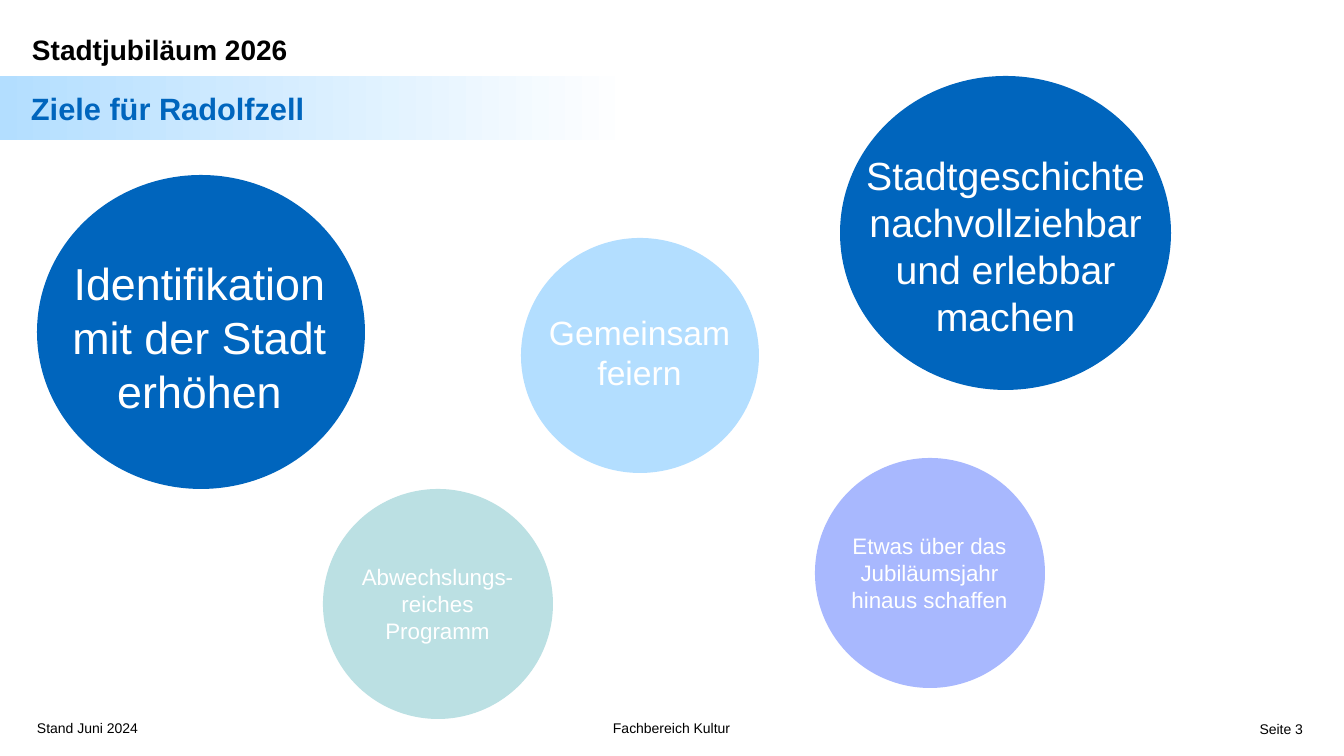
from pptx import Presentation
from pptx.dml.color import RGBColor
from pptx.enum.shapes import MSO_SHAPE
from pptx.enum.text import PP_ALIGN
from pptx.util import Emu, Pt

CIRCLE, BAND = MSO_SHAPE.FLOWCHART_CONNECTOR, MSO_SHAPE.RECTANGLE
LEFT, CENTER, RIGHT = PP_ALIGN.LEFT, PP_ALIGN.CENTER, PP_ALIGN.RIGHT
FONT = "Arial"
BLACK, WHITE, BLUE, SKY = "000000", "FFFFFF", "0065BD", "B3DEFF"
SLIDE_SIZE = (1344, 756)
INSET_X, INSET_Y = 10, 5

# Goals: text, size, text place, circle place, circle colour (places: left, top, width, height)
GOALS = [
    ("Stadtgeschichte nachvollziehbar und erlebbar machen", 28,
     (831, 146, 349, 201), (840, 76, 331, 314), BLUE),
    ("Identifikation mit der Stadt erhöhen", 32,
     (59, 251, 281, 173), (37, 175, 328, 314), BLUE),
    ("Abwechslungs-\vreiches Programm", 16,
     (343, 558, 189, 92), (323, 489, 230, 230), "BBE0E3"),
    ("Gemeinsam feiern", 24,
     (534, 307, 211, 92), (521, 238, 238, 235), SKY),
    ("Etwas über das Jubiläumsjahr hinaus schaffen", 16,
     (822, 527, 215, 92), (815, 458, 230, 230), "A8B8FE"),
]
# Headings: text, size, colour, place
HEADINGS = [
    ("Stadtjubiläum 2026", 20, BLACK, (22, 27, 278, 44)),
    ("Ziele für Radolfzell", 22, BLUE, (21, 85, 428, 38)),
]
HEADING_BAND = (0, 76, 632, 64)
# Footer: text, alignment, place
FOOTER = [
    ("Stand Juni 2024", LEFT, (37, 720, 138, 17)),
    ("Fachbereich Kultur", CENTER, (375, 720, 593, 17)),
    ("Seite 3", RIGHT, (1202, 721, 101, 17)),
]


def px(length):
    return Emu(round(length * 914400 / 100.8))


def color(code):
    return RGBColor.from_string(code)


def add_plain_shape(kind, place):
    shape = page.shapes.add_shape(kind, *map(px, place))
    shape.shadow.inherit = False
    shape.line.fill.background()
    return shape


def add_text(text, size, ink, place, align=LEFT, bold=False, inset=(INSET_X, INSET_Y)):
    frame = page.shapes.add_textbox(*map(px, place)).text_frame
    frame.word_wrap = True
    frame.margin_left = frame.margin_right = px(inset[0])
    frame.margin_top = frame.margin_bottom = px(inset[1])
    frame.text = text
    para = frame.paragraphs[0]
    para.alignment = align
    para.font.name, para.font.size, para.font.bold = FONT, Pt(size), bold
    para.font.color.rgb = color(ink)


deck = Presentation()
deck.slide_width, deck.slide_height = map(px, SLIDE_SIZE)
page = deck.slides.add_slide(deck.slide_layouts[6])

# Goal circles with their texts
for text, size, text_place, circle_place, fill_color in GOALS:
    circle = add_plain_shape(CIRCLE, circle_place)
    circle.fill.solid()
    circle.fill.fore_color.rgb = color(fill_color)
    add_text(text, size, WHITE, text_place, CENTER)

# Heading band fading to the right
band = add_plain_shape(BAND, HEADING_BAND)
band.fill.gradient()
band.fill.gradient_angle = 0
for stop, position, code in zip(band.fill.gradient_stops, (0, 1), (SKY, WHITE)):
    stop.position = position
    stop.color.rgb = color(code)

# Headings and footer
for text, size, ink, place in HEADINGS:
    add_text(text, size, ink, place, bold=True)
for text, align, place in FOOTER:
    add_text(text, 10, BLACK, place, align, inset=(0, 0))

deck.save("out.pptx")
